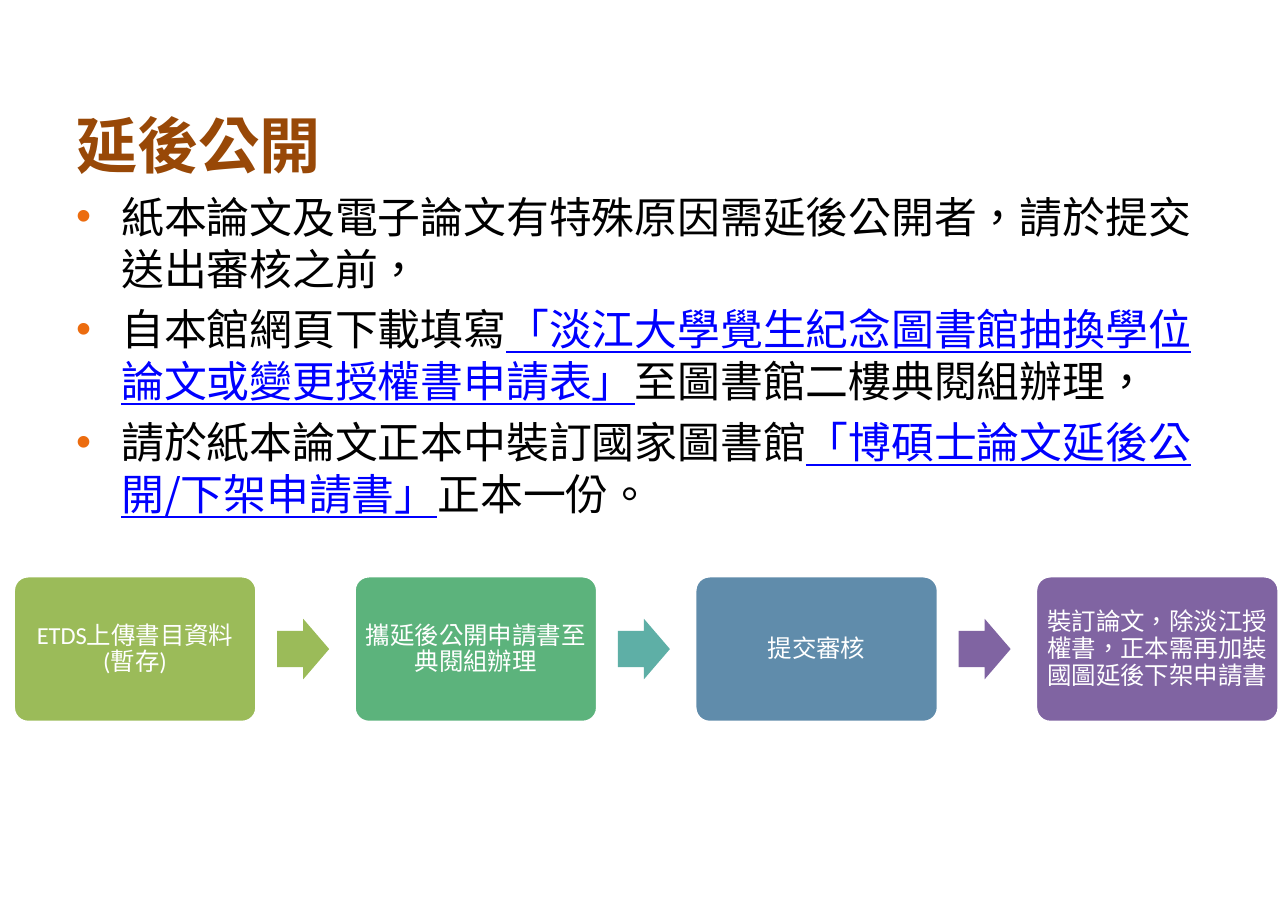
from lxml import etree
from pptx import Presentation
from pptx.dml.color import RGBColor
from pptx.enum.shapes import MSO_SHAPE
from pptx.enum.text import MSO_ANCHOR, MSO_AUTO_SIZE, PP_ALIGN
from pptx.oxml.ns import qn
from pptx.util import Pt

ROUND_RECT = MSO_SHAPE.ROUNDED_RECTANGLE
RIGHT_ARROW = MSO_SHAPE.RIGHT_ARROW
TOP, MIDDLE = MSO_ANCHOR.TOP, MSO_ANCHOR.MIDDLE
LEFT, CENTER = PP_ALIGN.LEFT, PP_ALIGN.CENTER
NO_FIT = MSO_AUTO_SIZE.NONE

CJK, LATIN = "Noto Sans CJK SC", "Calibri"
COLORS = {
    "title": "984807", "text": "000000", "link": "0000FF", "bullet": "EC6C0F",
    "white": "FFFFFF", "olive": "9BBB59", "green": "5CB37C", "teal": "5EAFA6",
    "blue": "608CAB", "purple": "8064A2",
}

BULLETS = [
    [("紙本論文及電子論文有特殊原因需延後公開者，請於提交送出審核之前，", "text")],
    [("自本館網頁下載填寫", "text"),
     ("「淡江大學覺生紀念圖書館抽換學位論文或變更授權書申請表」", "link"),
     ("至圖書館二樓典閱組辦理，", "text")],
    [("請於紙本論文正本中裝訂國家圖書館", "text"),
     ("「博碩士論文延後公開/下架申請書」", "link"),
     ("正本一份。", "text")],
]
STEPS = [
    ("ETDS上傳書目資料(暫存)", "olive", "olive"),
    ("攜延後公開申請書至典閱組辦理", "green", "teal"),
    ("提交審核", "blue", "purple"),
    ("裝訂論文，除淡江授權書，正本需再加裝國圖延後下架申請書", "purple", None),
]


def rgb(name):
    return RGBColor.from_string(COLORS[name])


def style_run(r, size, color, latin=CJK, bold=False):
    font = r.font
    font.name, font.size, font.bold = latin, Pt(size), bold
    font.color.rgb = rgb(color)
    rPr = r._r.get_or_add_rPr()
    rPr.set("lang", "zh-TW")
    etree.SubElement(rPr, qn("a:ea"), typeface=CJK)


def set_frame(tf, anchor, inset_x, inset_y):
    tf.word_wrap = True
    tf.auto_size = NO_FIT
    tf.vertical_anchor = anchor
    tf.margin_left = tf.margin_right = Pt(inset_x)
    tf.margin_top = tf.margin_bottom = Pt(inset_y)


def add_bullet(p, indent):
    pPr = p._p.get_or_add_pPr()
    pPr.set("marL", str(Pt(indent)))
    pPr.set("indent", str(-Pt(indent)))
    clr = etree.SubElement(pPr, qn("a:buClr"))
    etree.SubElement(clr, qn("a:srgbClr"), val=COLORS["bullet"])
    etree.SubElement(pPr, qn("a:buFont"), typeface="Arial")
    etree.SubElement(pPr, qn("a:buChar"), char="•")


def place_title(s, x, y, w, h):
    sp = s.shapes.title
    sp.left, sp.top, sp.width, sp.height = Pt(x), Pt(y), Pt(w), Pt(h)
    tf = sp.text_frame
    tf.text = "延後公開"
    set_frame(tf, TOP, 7.9, 3.6)
    p = tf.paragraphs[0]
    p.alignment = LEFT
    p.line_spacing = Pt(49)
    style_run(p.runs[0], 40, "title", bold=True)


def add_body(s, x, y, w, h):
    tf = s.shapes.add_textbox(Pt(x), Pt(y), Pt(w), Pt(h)).text_frame
    set_frame(tf, TOP, 7.9, 3.6)
    for i, parts in enumerate(BULLETS):
        p = tf.add_paragraph() if i else tf.paragraphs[0]
        add_bullet(p, 29.5)
        p.line_spacing = Pt(34)
        p.space_before = Pt(5.6 if i else 0)
        for text, color in parts:
            r = p.add_run()
            r.text = text
            style_run(r, 28, color)
            r.font.underline = color == "link"


def add_block(s, kind, x, y, w, h, color):
    sp = s.shapes.add_shape(kind, Pt(x), Pt(y), Pt(w), Pt(h))
    sp.shadow.inherit = False
    sp.fill.solid()
    sp.fill.fore_color.rgb = rgb(color)
    sp.line.fill.background()
    return sp


def add_process(s, x, y, w, h):
    box_w, arrow_w, arrow_h = 159, 34, 39.6
    pitch = (w - box_w) / (len(STEPS) - 1)
    arrow_dx = (box_w + pitch - arrow_w) / 2 - 1.5
    for i, (text, color, arrow_color) in enumerate(STEPS):
        left = x + i * pitch
        sp = add_block(s, ROUND_RECT, left, y, box_w, h, color)
        sp.adjustments[0] = 0.1
        sp.line.color.rgb = rgb("white")
        sp.line.width = Pt(2)
        tf = sp.text_frame
        tf.text = text
        set_frame(tf, MIDDLE, 2.2, 2.2)
        p = tf.paragraphs[0]
        p.alignment = CENTER
        p.line_spacing = Pt(17.5)
        style_run(p.runs[0], 16, "white", latin=LATIN)
        if arrow_color:
            arrow = add_block(s, RIGHT_ARROW, left + arrow_dx, y + (h - arrow_h) / 2,
                              arrow_w, arrow_h, arrow_color)
            arrow.adjustments[0] = 0.6
            arrow.adjustments[1] = 0.5


def main():
    prs = Presentation()
    prs.slide_width, prs.slide_height = Pt(841.7), Pt(595.4)
    s = prs.slides.add_slide(prs.slide_layouts[5])
    place_title(s, 41.8, 65.5, 758, 55)
    add_body(s, 41.8, 120.5, 758, 230)
    add_process(s, 8.8, 376.4, 827, 95.6)
    prs.save("out.pptx")


if __name__ == "__main__":
    main()
